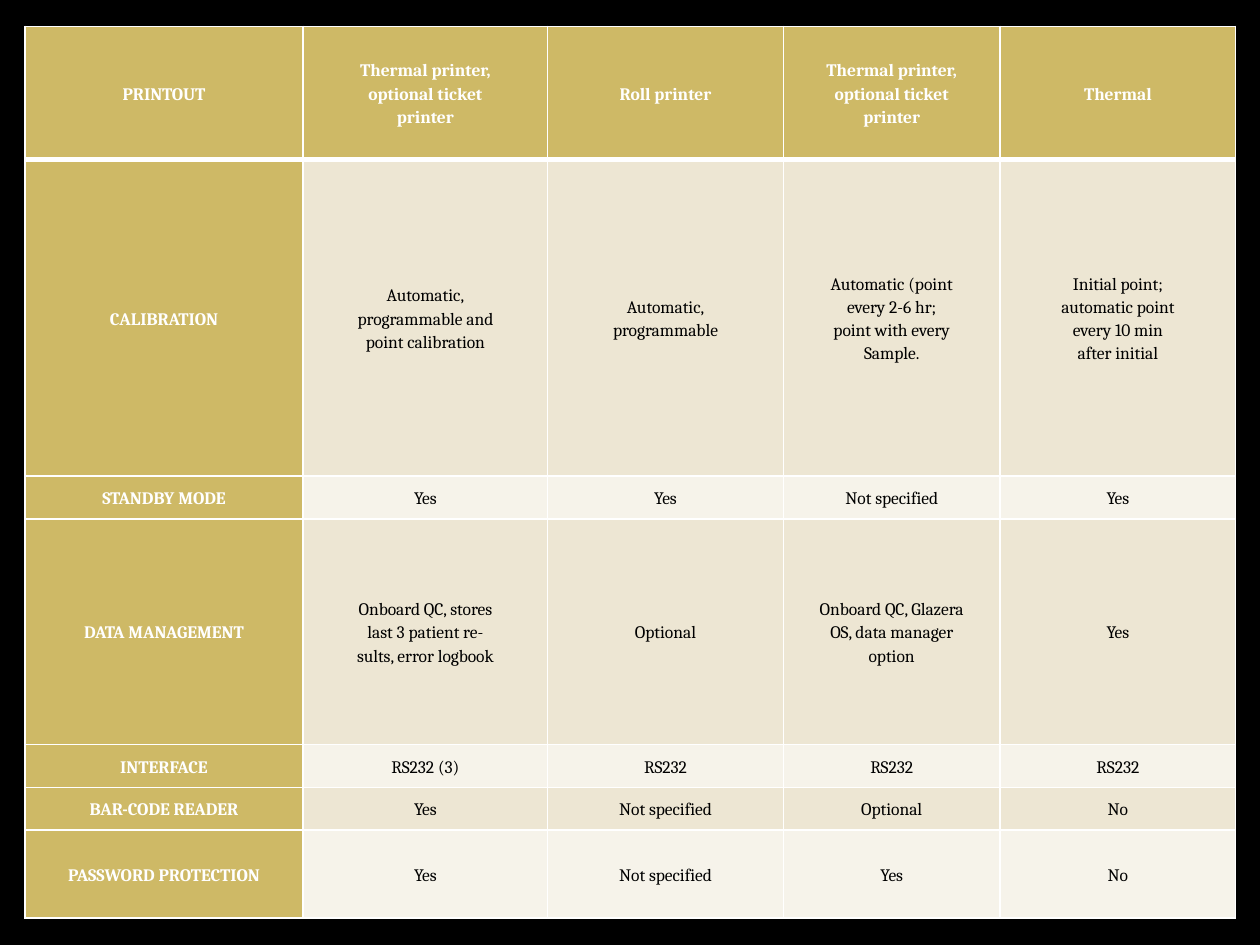
from lxml import etree
from pptx import Presentation
from pptx.dml.color import RGBColor
from pptx.enum.text import MSO_ANCHOR, PP_ALIGN
from pptx.oxml.ns import qn
from pptx.util import Cm, Pt

MIDDLE = MSO_ANCHOR.MIDDLE
CENTER = PP_ALIGN.CENTER

BLACK = RGBColor(0x00, 0x00, 0x00)
WHITE = RGBColor(0xFF, 0xFF, 0xFF)
GOLD = RGBColor(0xCE, 0xB9, 0x66)
SAND = RGBColor(0xED, 0xE6, 0xD3)
CREAM = RGBColor(0xF6, 0xF3, 0xEA)

FONT = "Cambria"
COL_WIDTHS = [5.61, 4.93, 4.75, 4.37, 4.75]
ROW_HEIGHTS = [2.69, 6.38, 0.86, 4.55, 0.86, 0.86, 1.78]

TICKET_PRINTER = "Thermal printer,\noptional ticket\nprinter"
ROWS = [
    ["PRINTOUT", TICKET_PRINTER, "Roll printer", TICKET_PRINTER, "Thermal"],
    ["CALIBRATION",
     "Automatic,\nprogrammable and\npoint calibration",
     "Automatic,\nprogrammable",
     "Automatic (point\nevery 2-6 hr;\npoint with every\nSample.",
     "Initial point;\nautomatic point\nevery 10 min\nafter initial"],
    ["STANDBY MODE", "Yes", "Yes", "Not specified", "Yes"],
    ["DATA MANAGEMENT",
     "Onboard QC, stores\nlast 3 patient re-\nsults, error logbook",
     "Optional",
     "Onboard QC, Glazera\nOS, data manager\noption",
     "Yes"],
    ["INTERFACE", "RS232 (3)", "RS232", "RS232", "RS232"],
    ["BAR-CODE READER", "Yes", "Not specified", "Optional", "No"],
    ["PASSWORD PROTECTION", "Yes", "Not specified", "Yes", "No"],
]


def set_borders(cell, color, widths):
    tcPr = cell._tc.get_or_add_tcPr()
    for i, (side, width) in enumerate(widths.items()):
        ln = etree.Element(qn(f"a:ln{side}"), w=str(Pt(width)))
        fill = etree.SubElement(ln, qn("a:solidFill"))
        etree.SubElement(fill, qn("a:srgbClr"), val=str(color))
        tcPr.insert(i, ln)


def set_text(cell, text, color, bold):
    cell.vertical_anchor = MIDDLE
    cell.margin_left = cell.margin_right = Cm(0.18)
    cell.margin_top = cell.margin_bottom = 0
    tf = cell.text_frame
    tf.text = text
    for p in tf.paragraphs:
        p.alignment = CENTER
        p.line_spacing = 1.15
        for r in p.runs:
            r.font.name = FONT
            r.font.size = Pt(10)
            r.font.bold = bold
            r.font.color.rgb = color


def format_cell(cell, text, row, col):
    heading = row == 0 or col == 0
    band = SAND if row % 2 else CREAM
    set_text(cell, text, WHITE if heading else BLACK, heading)
    cell.fill.solid()
    cell.fill.fore_color.rgb = GOLD if heading else band
    set_borders(cell, WHITE, {"L": 1, "R": 1,
                              "T": 3 if row == 1 else 1,
                              "B": 3 if row == 0 else 1})


def add_comparison_table(s):
    table = s.shapes.add_table(
        len(ROWS), len(COL_WIDTHS), Cm(0.5), Cm(0.53),
        Cm(sum(COL_WIDTHS)), Cm(sum(ROW_HEIGHTS))).table
    table.first_col = True
    for column, width in zip(table.columns, COL_WIDTHS):
        column.width = Cm(width)
    for i, (height, texts) in enumerate(zip(ROW_HEIGHTS, ROWS)):
        table.rows[i].height = Cm(height)
        for j, text in enumerate(texts):
            format_cell(table.cell(i, j), text, i, j)


def main():
    prs = Presentation()
    prs.slide_width, prs.slide_height = Cm(25.4), Cm(19.05)
    s = prs.slides.add_slide(prs.slide_layouts[6])
    s.background.fill.solid()
    s.background.fill.fore_color.rgb = BLACK
    add_comparison_table(s)
    prs.save("out.pptx")


if __name__ == "__main__":
    main()
